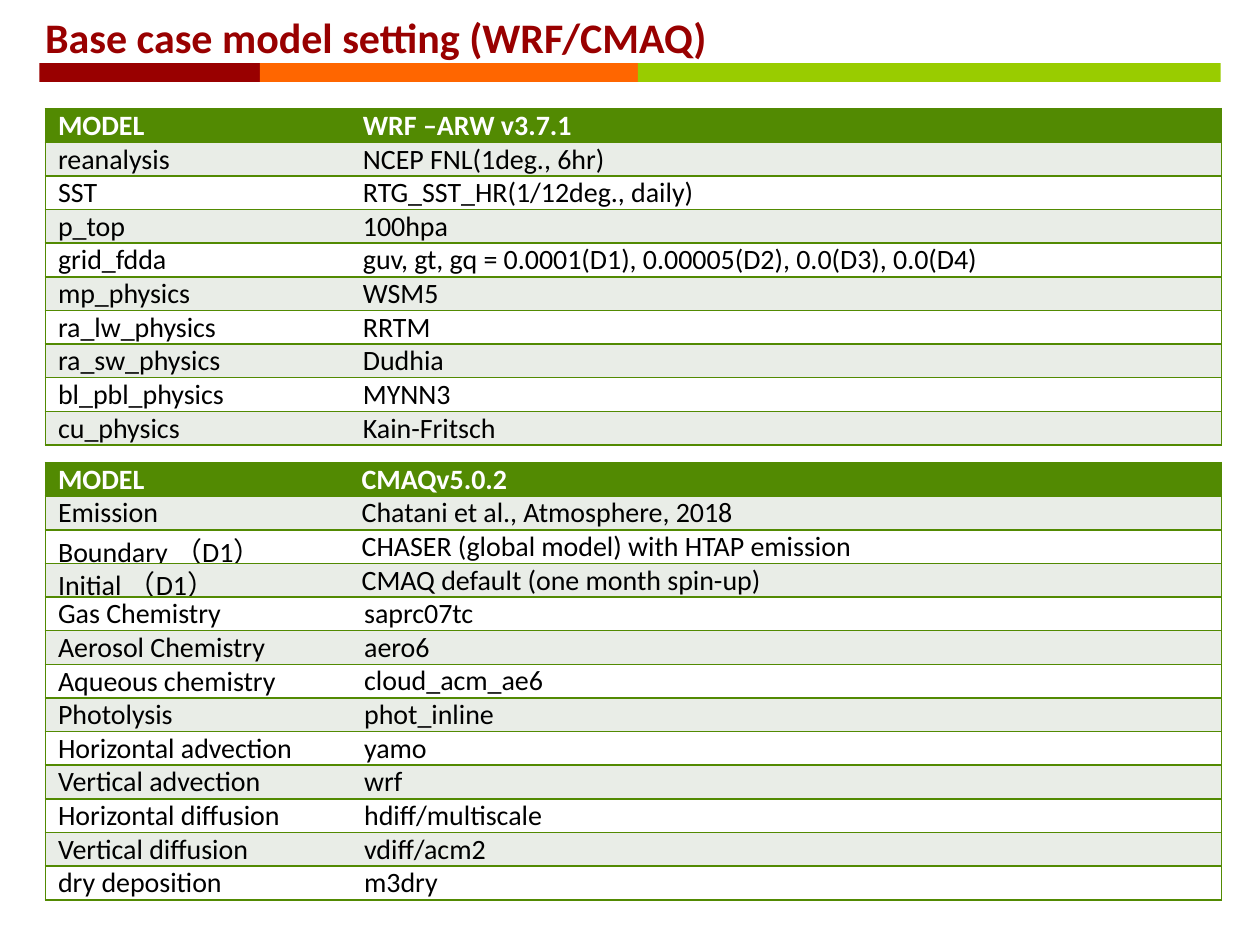
import pptx
import pptx.util
import pptx.dml.color
import pptx.enum.shapes
import pptx.enum.text
import pptx.oxml
import pptx.oxml.ns

Pt = pptx.util.Pt
RGB = pptx.dml.color.RGBColor
RED = RGB(0x99, 0x00, 0x00)
ORANGE = RGB(0xFF, 0x66, 0x00)
LIME = RGB(0x99, 0xCC, 0x00)
GREEN = RGB(0x52, 0x8A, 0x02)
PALE = RGB(0xE9, 0xED, 0xE7)
WHITE = RGB(0xFF, 0xFF, 0xFF)
BLACK = RGB(0x00, 0x00, 0x00)
ROW = 19.2  # height of every table row


def write(frame, text, size, color, bold):
    run = frame.paragraphs[0].add_run()
    run.text = text
    run.font.name = "Calibri"
    run.font.size = Pt(size)
    run.font.bold = bold
    run.font.color.rgb = color


def edge(cell, side, color):
    """Draw one cell border, or clear it when color is None."""
    props = cell._tc.get_or_add_tcPr()
    line = pptx.oxml.parse_xml(
        f'<a:ln{side} {pptx.oxml.ns.nsdecls("a")} w="{Pt(1)}"/>')
    if color is None:
        pptx.oxml.ns.qn("a:noFill")
        line.append(pptx.oxml.parse_xml(
            f'<a:noFill {pptx.oxml.ns.nsdecls("a")}/>'))
    else:
        line.append(pptx.oxml.parse_xml(
            f'<a:solidFill {pptx.oxml.ns.nsdecls("a")}>'
            f'<a:srgbClr val="{color}"/></a:solidFill>'))
    props.append(line)


deck = pptx.Presentation()
deck.slide_width, deck.slide_height = Pt(720), Pt(540)
slide = deck.slides.add_slide(deck.slide_layouts[6])

# Three-colour bar under the title
left = 22.5
for width, color in [(126, RED), (216, ORANGE), (333, LIME)]:
    bar = slide.shapes.add_shape(
        pptx.enum.shapes.MSO_SHAPE.RECTANGLE,
        Pt(left), Pt(36), Pt(width), Pt(10.8))
    bar.shadow.inherit = False
    bar.fill.solid()
    bar.fill.fore_color.rgb = color
    bar.line.fill.background()
    left += width

# Title
title = slide.shapes.add_textbox(Pt(18.7), Pt(3), Pt(410.4), Pt(36))
title.text_frame.word_wrap = False
write(title.text_frame, "Base case model setting (WRF/CMAQ)", 24, RED, True)

# Settings of the two models
weather = [
    ("MODEL", "WRF –ARW v3.7.1"),
    ("reanalysis", "NCEP FNL(1deg., 6hr)"),
    ("SST", "RTG_SST_HR(1/12deg., daily)"),
    ("p_top", "100hpa"),
    ("grid_fdda", "guv, gt, gq = 0.0001(D1), 0.00005(D2), 0.0(D3), 0.0(D4)"),
    ("mp_physics", "WSM5"),
    ("ra_lw_physics", "RRTM"),
    ("ra_sw_physics", "Dudhia"),
    ("bl_pbl_physics", "MYNN3"),
    ("cu_physics", "Kain-Fritsch"),
]
air = [
    ("MODEL", "CMAQv5.0.2"),
    ("Emission", "Chatani et al., Atmosphere, 2018"),
    ("Boundary （D1）", "CHASER (global model) with HTAP emission"),
    ("Initial （D1）", "CMAQ default (one month spin-up)"),
    ("Gas Chemistry", "saprc07tc"),
    ("Aerosol Chemistry", "aero6"),
    ("Aqueous chemistry", "cloud_acm_ae6"),
    ("Photolysis", "phot_inline"),
    ("Horizontal advection", "yamo"),
    ("Vertical advection", "wrf"),
    ("Horizontal diffusion", "hdiff/multiscale"),
    ("Vertical diffusion", "vdiff/acm2"),
    ("dry deposition", "m3dry"),
]

# Tables: top, first column width, first row with low-set values, rows
for top, first, low, rows in [(62.1, 174.2, len(weather), weather),
                              (264.3, 173.5, 4, air)]:
    grid = slide.shapes.add_table(
        len(rows), 2, Pt(26), Pt(top), Pt(672), Pt(ROW * len(rows))).table
    grid.columns[0].width = Pt(first)
    grid.columns[1].width = Pt(672 - first)
    for r, texts in enumerate(rows):
        grid.rows[r].height = Pt(ROW)
        head = r == 0
        for c, text in enumerate(texts):
            cell = grid.cell(r, c)
            inset = 7.2
            if c == 1 and r >= low:
                inset = 8.64
                cell.vertical_anchor = pptx.enum.text.MSO_ANCHOR.BOTTOM
            cell.margin_left = cell.margin_right = Pt(inset)
            cell.margin_top = cell.margin_bottom = Pt(0)
            edge(cell, "L", GREEN if c == 0 else None)
            edge(cell, "R", GREEN if c == 1 else None)
            edge(cell, "T", GREEN)
            edge(cell, "B", GREEN)
            cell.fill.solid()
            cell.fill.fore_color.rgb = (
                GREEN if head else PALE if r % 2 else WHITE)
            write(cell.text_frame, text, 16, WHITE if head else BLACK, head)

deck.save("out.pptx")
